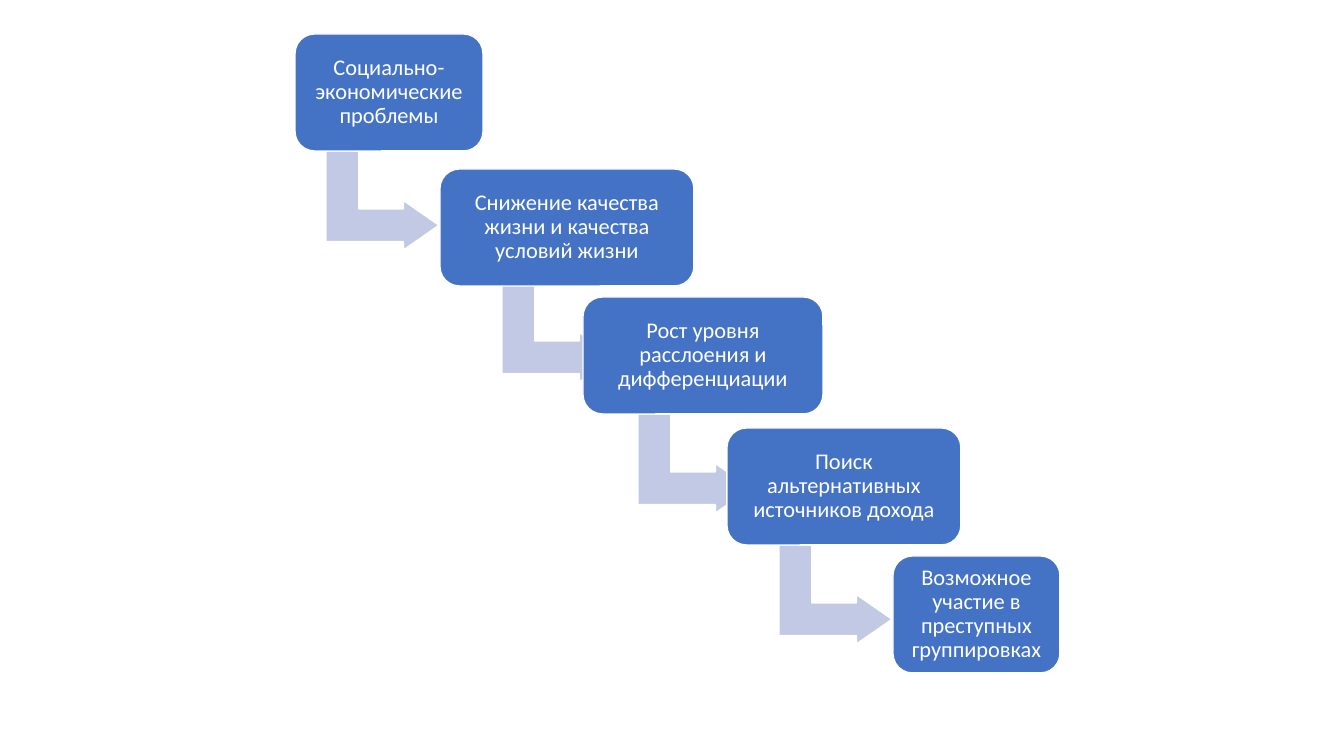
import pptx
import pptx.util
import pptx.dml.color
import pptx.enum.shapes
import pptx.enum.text

STAGES = [
    {"text": "Социально-экономические проблемы", "left": 295, "top": 34, "width": 188, "arrow": (333, 144)},
    {"text": "Снижение качества жизни и качества условий жизни", "left": 440, "top": 169, "width": 254, "arrow": (509, 276)},
    {"text": "Рост уровня расслоения и дифференциации", "left": 583, "top": 297, "width": 240, "arrow": (645, 407)},
    {"text": "Поиск альтернативных источников дохода", "left": 727, "top": 428, "width": 234, "arrow": (786, 538)},
    {"text": "Возможное участие в преступных группировках", "left": 893, "top": 556, "width": 167, "arrow": None},
]
SLIDE_SIZE = (1344, 756)
STAGE_HEIGHT = 117
ARROW_SIZE = (99, 113)
ARROW_BENDS = (0.33, 0.25, 0.36)
STAGE_COLOR, ARROW_COLOR, WHITE = "4472C4", "C1C9E4", "FFFFFF"
EMU_PER_PX = 914400 / 100.8
KINDS = pptx.enum.shapes.MSO_SHAPE


def px(length):
    return pptx.util.Emu(round(length * EMU_PER_PX))


def color(value):
    return pptx.dml.color.RGBColor.from_string(value)


def set_format(target, values):
    for key, value in values.items():
        setattr(target, key, value)


FRAME_FORMAT = {
    "word_wrap": True,
    "vertical_anchor": pptx.enum.text.MSO_ANCHOR.MIDDLE,
    **{f"margin_{side}": px(7) for side in ("left", "top", "right", "bottom")},
}
PARAGRAPH_FORMAT = {"alignment": pptx.enum.text.PP_ALIGN.CENTER, "line_spacing": 0.9}
FONT_FORMAT = {"name": "Calibri", "size": pptx.util.Pt(16)}


def add_part(slide, kind, box, fill):
    part = slide.shapes.add_shape(kind, *map(px, box))
    part.shadow.inherit = False
    part.fill.solid()
    part.fill.fore_color.rgb = color(fill)
    part.line.color.rgb = color(WHITE)
    part.line.width = pptx.util.Pt(1)
    return part


def add_arrow(slide, position):
    arrow = add_part(slide, KINDS.BENT_UP_ARROW, (*position, *ARROW_SIZE), ARROW_COLOR)
    arrow.rotation = 90
    for index, bend in enumerate(ARROW_BENDS):
        arrow.adjustments[index] = bend


def add_stage(slide, stage):
    box = (stage["left"], stage["top"], stage["width"], STAGE_HEIGHT)
    step = add_part(slide, KINDS.ROUNDED_RECTANGLE, box, STAGE_COLOR)
    set_format(step.text_frame, FRAME_FORMAT)
    paragraph = step.text_frame.paragraphs[0]
    set_format(paragraph, PARAGRAPH_FORMAT)
    run = paragraph.add_run()
    run.text = stage["text"]
    set_format(run.font, FONT_FORMAT)
    run.font.color.rgb = color(WHITE)


def main():
    deck = pptx.Presentation()
    deck.slide_width, deck.slide_height = map(px, SLIDE_SIZE)
    slide = deck.slides.add_slide(deck.slide_layouts[6])
    for stage in STAGES:
        if stage["arrow"]:
            add_arrow(slide, stage["arrow"])
        add_stage(slide, stage)
    deck.save("out.pptx")


if __name__ == "__main__":
    main()
